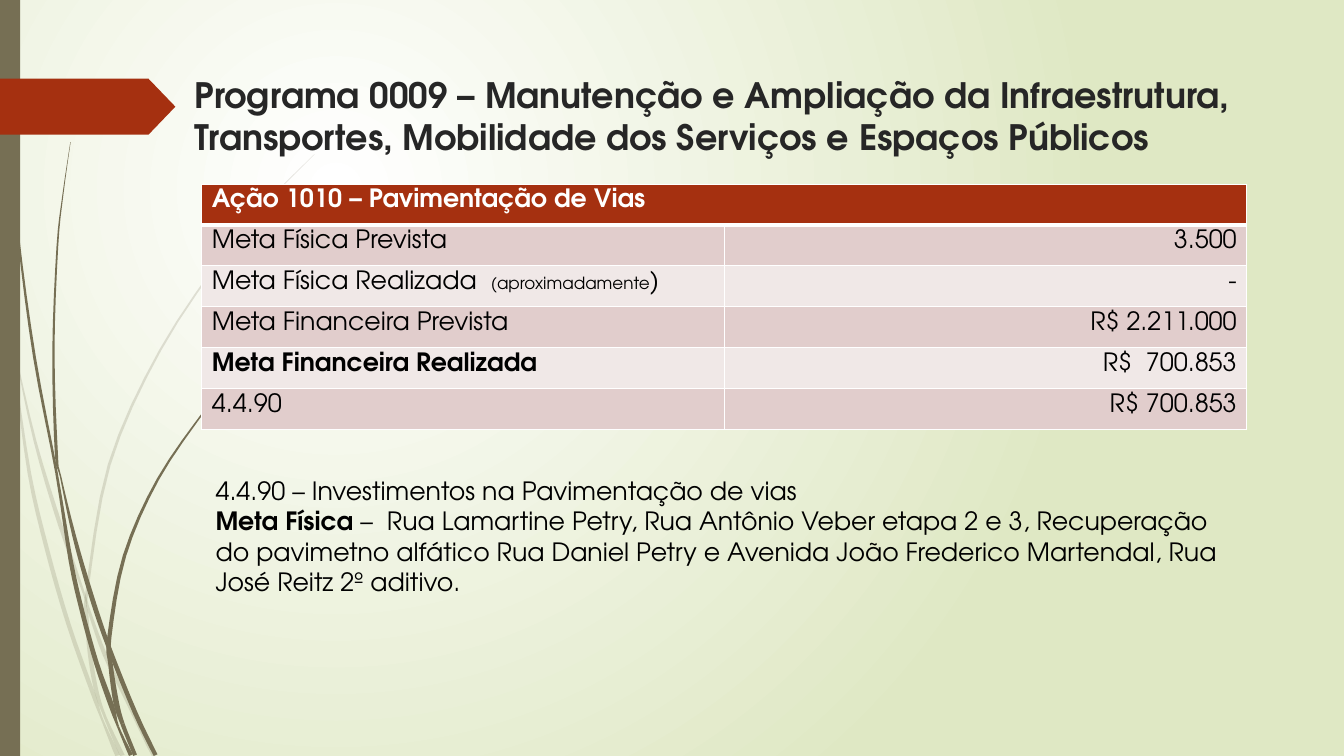
from math import hypot

from lxml.etree import SubElement
from pptx import Presentation
from pptx.dml.color import RGBColor
from pptx.enum.shapes import MSO_SHAPE
from pptx.enum.text import MSO_ANCHOR, MSO_AUTO_SIZE, PP_ALIGN
from pptx.oxml import parse_xml
from pptx.oxml.ns import nsdecls, qn
from pptx.util import Pt

FONT = "TeX Gyre Adventor"
WHITE = RGBColor(0xFF, 0xFF, 0xFF)
BLACK = RGBColor(0, 0, 0)
TITLE_GRAY = RGBColor(0x26, 0x26, 0x26)
PALE_GREEN = RGBColor(0xDF, 0xE8, 0xC4)
OLIVE = RGBColor(0x76, 0x6F, 0x54)
RUST = RGBColor(0xA5, 0x30, 0x10)
ROW_FILLS = [RGBColor(0xE1, 0xCD, 0xCC), RGBColor(0xF0, 0xE8, 0xE7)]

TITLE = ("Programa 0009 – Manutenção e Ampliação da Infraestrutura, "
         "Transportes, Mobilidade dos Serviços e Espaços Públicos")
HEADER = [("Ação 1010 – Pavimentação de Vias", 18, True)]
ROWS = [
    ([("Meta Física Prevista", 18, False)], "3.500"),
    ([("Meta Física Realizada  ", 18, False), ("(aproximadamente", 12, False),
      (")", 18, False)], "-"),
    ([("Meta Financeira Prevista", 18, False)], "R$ 2.211.000"),
    ([("Meta Financeira Realizada", 18, True)], "R$  700.853"),
    ([("4.4.90", 18, False)], "R$ 700.853"),
]
NOTES = [
    [("4.4.90 – Investimentos na Pavimentação de vias", 18, False)],
    [("Meta Física ", 18, True),
     ("–  Rua Lamartine Petry, Rua Antônio Veber etapa 2 e 3, Recuperação do "
      "pavimetno alfático Rua Daniel Petry e Avenida João Frederico Martendal, "
      "Rua José Reitz 2º aditivo.", 18, False)],
]

FAINT_STRANDS = [
    [[(0, 209, 2), (7.5, 251, 2)],
     [(10, 262, 1), (21, 338, 2.5), (33.5, 392, 3), (49, 446, 3), (66.5, 495.5, 3)],
     [(73, 514, 1.5), (84, 540, 3.5)]],
    [[(10, 248, 0.5), (25, 315, 2), (43, 375, 3)],
     [(61, 427, 1.5), (63.2, 435, 2)],
     [(75, 468, 3), (90, 498.5, 3), (110, 540, 3.5)]],
    [[(224.6, 110.2, 0.2), (193, 142, 0.6), (164.5, 175.5, 1), (114.5, 250, 1.5),
      (78, 332, 2)],
     [(62.3, 421, 2), (62, 440, 2.5), (64, 465, 3), (68.5, 492, 3)],
     [(75, 512, 2), (87.5, 540, 3.5)]],
]
SOLID_STRANDS = [
    [[(2.5, 0, 0.6), (3.6, 34.6, 0.6), (5.2, 79, 0.8), (12.9, 167.5, 1.3),
      (24.7, 255.6, 2)],
     [(40.4, 338, 1.8), (50.6, 401, 3), (59, 438, 3.2), (69, 474, 3.4),
      (79.6, 504, 3.8)],
     [(84.3, 519, 1.5), (93.5, 539.5, 3)]],
    [[(50.4, 101.5, 0.2), (45, 139, 0.7), (41, 176.4, 1.2), (38.2, 251, 1.6),
      (40.3, 324, 2.2)],
     [(43.2, 340, 1), (53, 383, 2.6), (65.2, 425.5, 3.4)],
     [(77.8, 462.5, 3.2), (96.5, 509, 3.2), (111.2, 539.5, 3)]],
    [[(187, 247.7, 0.2), (166.3, 268.9, 0.6), (147.2, 292, 1), (113, 342, 1.7),
      (88.9, 397, 2.4)],
     [(78.1, 455, 3), (79, 475, 3.2), (83, 502, 4)],
     [(87.5, 517, 3), (96.5, 539.5, 2.8)]],
]

SLIDE_WIDTH, SLIDE_HEIGHT = 960, 540
BAR_WIDTH = 14.4
FLAG_BOX = (0, 56.2, 125.3, 40)
TITLE_BOX = (131.8, 49, 774, 100.8)
NOTES_BOX = (146.9, 336, 746, 94.3)
TABLE_LEFT, TABLE_TOP = 144.2, 131.5
COLUMN_WIDTH, ROW_HEIGHT = 373.2, 29.2
STRAND_STEPS = 4
CURVE_SCALE = 100


def points(values):
    return [Pt(value) for value in values]


def add_runs(paragraph, runs, color, align=PP_ALIGN.LEFT):
    paragraph.alignment = align
    for text, size, bold in runs:
        run = paragraph.add_run()
        run.text = text
        run.font.name = FONT
        run.font.size = Pt(size)
        run.font.bold = bold
        run.font.color.rgb = color


def paint(shape, color):
    shape.shadow.inherit = False
    shape.fill.solid()
    shape.fill.fore_color.rgb = color
    shape.line.fill.background()


def smooth_spine(knots):
    padded = [knots[0], *knots, knots[-1]]
    spine = []
    for a, b, c, d in zip(padded, padded[1:], padded[2:], padded[3:]):
        for step in range(STRAND_STEPS):
            t = step / STRAND_STEPS
            spine.append([
                q + 0.5 * t * (r - p + t * (2 * p - 5 * q + 4 * r - s
                                            + t * (3 * (q - r) + s - p)))
                for p, q, r, s in zip(a, b, c, d)])
    return spine + [list(knots[-1])]


def add_piece(slide, left, right, faint):
    outline = [(max(x, 0) * CURVE_SCALE, min(max(y, 0), SLIDE_HEIGHT) * CURVE_SCALE)
               for x, y in left + right[::-1]]
    builder = slide.shapes.build_freeform(*outline[0], scale=Pt(1) / CURVE_SCALE)
    builder.add_line_segments(outline[1:], close=True)
    piece = builder.convert_to_shape()
    paint(piece, OLIVE)
    if faint:
        color = piece.element.spPr.find(qn("a:solidFill")).find(qn("a:srgbClr"))
        SubElement(color, qn("a:alpha"), val="20000")


def add_strand(slide, pieces, faint):
    spine = smooth_spine([knot for piece in pieces for knot in piece])
    left, right = [], []
    for index, (x, y, width) in enumerate(spine):
        before = spine[max(index - 1, 0)]
        after = spine[min(index + 1, len(spine) - 1)]
        dx, dy = after[0] - before[0], after[1] - before[1]
        half = width / 2 / hypot(dx, dy)
        left.append((x + dy * half, y - dx * half))
        right.append((x - dy * half, y + dx * half))
    start = 0
    for piece in pieces:
        end = start + len(piece) * STRAND_STEPS
        add_piece(slide, left[start:end + 1], right[start:end + 1], faint)
        start = end


def set_background(slide):
    fill = slide.background.fill
    fill.gradient()
    for stop, color in zip(fill.gradient_stops, [WHITE, PALE_GREEN]):
        stop.color.rgb = color
    gradient = next(slide.element.iter(qn("a:gradFill")))
    gradient.replace(gradient.find(qn("a:lin")), parse_xml(
        f'<a:path {nsdecls("a")} path="circle"><a:fillToRect l="50000" '
        't="50000" r="100000" b="100000"/></a:path>'))


def format_cell(cell, row, fill):
    cell.fill.solid()
    cell.fill.fore_color.rgb = fill
    cell.vertical_anchor = MSO_ANCHOR.TOP
    widths = {"lnL": 1, "lnR": 1, "lnT": 3 if row == 1 else 1, "lnB": 3 if row == 0 else 1}
    for index, (side, width) in enumerate(widths.items()):
        cell._tc.get_or_add_tcPr().insert(index, parse_xml(
            f'<a:{side} {nsdecls("a")} w="{Pt(width)}"><a:solidFill>'
            f'<a:srgbClr val="{WHITE}"/></a:solidFill></a:{side}>'))


def add_goals_table(slide):
    row_count = len(ROWS) + 1
    table = slide.shapes.add_table(row_count, 2, *points(
        (TABLE_LEFT, TABLE_TOP, 2 * COLUMN_WIDTH, row_count * ROW_HEIGHT))).table
    for row in range(row_count):
        table.rows[row].height = Pt(ROW_HEIGHT)
        fill = ROW_FILLS[(row - 1) % 2] if row else RUST
        for column in range(2):
            format_cell(table.cell(row, column), row, fill)
    table.cell(0, 0).merge(table.cell(0, 1))
    add_runs(table.cell(0, 0).text_frame.paragraphs[0], HEADER, WHITE)
    for row, (label, value) in enumerate(ROWS, 1):
        add_runs(table.cell(row, 0).text_frame.paragraphs[0], label, BLACK)
        add_runs(table.cell(row, 1).text_frame.paragraphs[0],
                 [(value, 18, False)], BLACK, PP_ALIGN.RIGHT)


def main():
    presentation = Presentation()
    presentation.slide_width, presentation.slide_height = points((SLIDE_WIDTH, SLIDE_HEIGHT))
    slide = presentation.slides.add_slide(presentation.slide_layouts[5])
    set_background(slide)

    for strands, faint in [(FAINT_STRANDS, True), (SOLID_STRANDS, False)]:
        for pieces in strands:
            add_strand(slide, pieces, faint)
    bar = slide.shapes.add_shape(
        MSO_SHAPE.RECTANGLE, *points((0, 0, BAR_WIDTH, SLIDE_HEIGHT)))
    paint(bar, OLIVE)
    flag = slide.shapes.add_shape(MSO_SHAPE.PENTAGON, *points(FLAG_BOX))
    flag.adjustments[0] = 0.48
    paint(flag, RUST)

    title = slide.shapes.title
    title.left, title.top, title.width, title.height = points(TITLE_BOX)
    title.text_frame.auto_size = MSO_AUTO_SIZE.NONE
    title.text_frame.vertical_anchor = MSO_ANCHOR.TOP
    add_runs(title.text_frame.paragraphs[0], [(TITLE, 25, True)], TITLE_GRAY)

    add_goals_table(slide)

    frame = slide.shapes.add_textbox(*points(NOTES_BOX)).text_frame
    frame.word_wrap = True
    for index, runs in enumerate(NOTES):
        paragraph = frame.add_paragraph() if index else frame.paragraphs[0]
        add_runs(paragraph, runs, BLACK)
    presentation.save("out.pptx")


if __name__ == "__main__":
    main()
